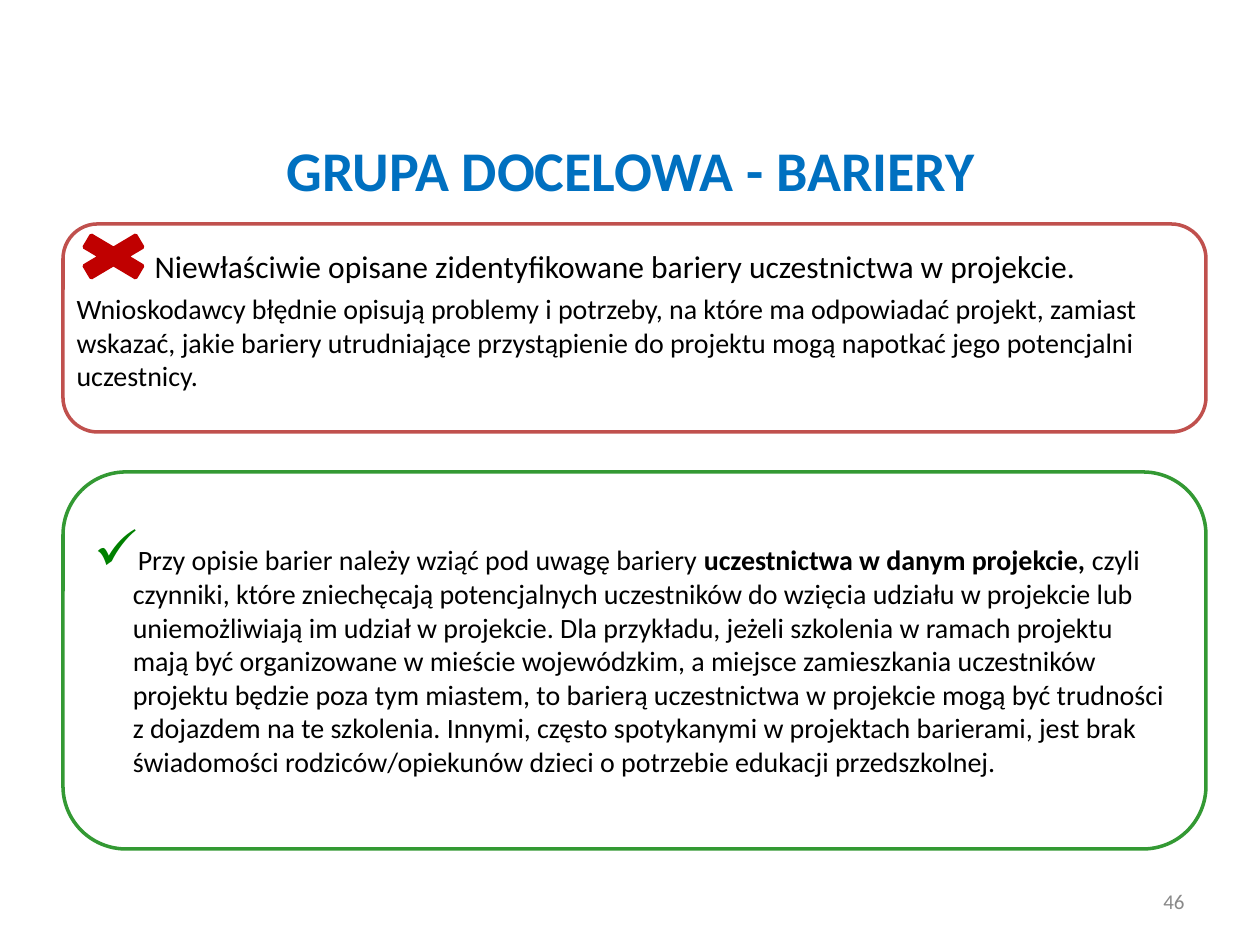
from lxml.etree import SubElement
from pptx import Presentation
from pptx.dml.color import RGBColor
from pptx.enum.shapes import MSO_SHAPE
from pptx.enum.text import MSO_ANCHOR, MSO_AUTO_SIZE, PP_ALIGN
from pptx.oxml.ns import qn
from pptx.util import Pt

PX = 7257  # EMU per px, at 126 px to the inch
FONT = "Calibri"
BLACK = "000000"


def color(code):
    return RGBColor.from_string(code)


def emu(*sizes):
    return [size * PX for size in sizes]


class Deck:
    """Holds the current slide and its text style."""

    def __init__(self, width, height):
        self.prs = Presentation()
        self.prs.slide_width, self.prs.slide_height = emu(width, height)
        self.slide = self.prs.slides.add_slide(self.prs.slide_layouts[1])

    def style(self, par, size, tone=BLACK, bold=None):
        font = par.font
        font.name, font.size, font.bold = FONT, Pt(size), bold
        font.color.rgb = color(tone)

    def place(self, shape, box):
        shape.left, shape.top, shape.width, shape.height = emu(*box)

    def indent(self, par, left, first):
        props = par._p.get_or_add_pPr()
        props.set("marL", str(left * PX))
        props.set("indent", str(first * PX))
        return props

    def title(self, text, box):
        shape = self.slide.shapes.title
        self.place(shape, box)
        frame = shape.text_frame
        frame.text = text
        frame.auto_size = MSO_AUTO_SIZE.NONE
        frame.vertical_anchor = MSO_ANCHOR.MIDDLE
        par = frame.paragraphs[0]
        par.alignment = PP_ALIGN.CENTER
        self.style(par, 32, "0070C0", True)

    def body(self, rows, box, top):
        """Fill the body with rows of (text, size, first-line indent)."""
        shape = self.slide.placeholders[1]
        self.place(shape, box)
        frame = shape.text_frame
        frame.text = "\n".join(text for text, _, _ in rows)
        frame.auto_size = MSO_AUTO_SIZE.NONE
        frame.margin_top = top * PX
        for i, (par, (_, size, first)) in enumerate(zip(frame.paragraphs, rows)):
            SubElement(self.indent(par, 0, first), qn("a:buNone"))
            par.space_before = Pt(4 if i else 0)
            self.style(par, size)

    def shape(self, kind, box, line, fill=None):
        shape = self.slide.shapes.add_shape(kind, *emu(*box))
        shape.shadow.inherit = False
        shape.line.color.rgb = color(line)
        shape.line.width = Pt(2)
        if fill:
            shape.fill.solid()
            shape.fill.fore_color.rgb = color(fill)
        else:
            shape.fill.background()
        return shape

    def check(self, shape, parts):
        """Write (text, bold) parts as one paragraph with a tick bullet."""
        frame = shape.text_frame
        frame.word_wrap = True
        frame.vertical_anchor = MSO_ANCHOR.MIDDLE
        par = frame.paragraphs[0]
        props = self.indent(par, 39, -39)
        tint = SubElement(props, qn("a:buClr"))
        SubElement(tint, qn("a:srgbClr"), val="008000")
        SubElement(props, qn("a:buSzPct"), val="200000")
        SubElement(props, qn("a:buChar"), char="✓")
        par.alignment = PP_ALIGN.LEFT
        self.style(par, 16)
        for text, bold in parts:
            run = par.add_run()
            run.text = text
            run.font.bold = bold

    def number(self, text, box):
        frame = self.slide.shapes.add_textbox(*emu(*box)).text_frame
        frame.word_wrap = True
        frame.vertical_anchor = MSO_ANCHOR.MIDDLE
        frame.text = text
        par = frame.paragraphs[0]
        par.alignment = PP_ALIGN.RIGHT
        self.style(par, 12, "898989")


def main():
    deck = Deck(1260, 945)
    deck.title("GRUPA DOCELOWA - BARIERY", (64, 135, 1134, 69))
    deck.shape(MSO_SHAPE.ROUNDED_RECTANGLE, (63, 224, 1143, 208), "C0504D")
    deck.body([
        ("Niewłaściwie opisane zidentyfikowane bariery uczestnictwa w projekcie.",
         18, 78),
        ("Wnioskodawcy błędnie opisują problemy i potrzeby, na które ma odpowiadać "
         "projekt, zamiast wskazać, jakie bariery utrudniające przystąpienie do "
         "projektu mogą napotkać jego potencjalni uczestnicy.", 16, 0),
    ], (64, 195, 1134, 307), 52)
    advice = deck.shape(MSO_SHAPE.ROUNDED_RECTANGLE, (63, 472, 1143, 377), "339933")
    deck.check(advice, [
        ("Przy opisie barier należy wziąć pod uwagę bariery ", False),
        ("uczestnictwa w danym projekcie,", True),
        (" czyli czynniki, które zniechęcają potencjalnych uczestników do wzięcia "
         "udziału w projekcie lub uniemożliwiają im udział w projekcie. Dla "
         "przykładu, jeżeli szkolenia w ramach projektu mają być organizowane w "
         "mieście wojewódzkim, a miejsce zamieszkania uczestników projektu będzie "
         "poza tym miastem, to barierą uczestnictwa w projekcie mogą być trudności "
         "z dojazdem na te szkolenia. Innymi, często spotykanymi w projektach "
         "barierami, jest brak świadomości rodziców/opiekunów dzieci o potrzebie "
         "edukacji przedszkolnej.", False),
    ])
    deck.shape(MSO_SHAPE.MATH_MULTIPLY, (64, 227, 99, 59), "C00000", "C00000")
    deck.number("46", (903, 876, 294, 50))
    deck.prs.save("out.pptx")


if __name__ == "__main__":
    main()
